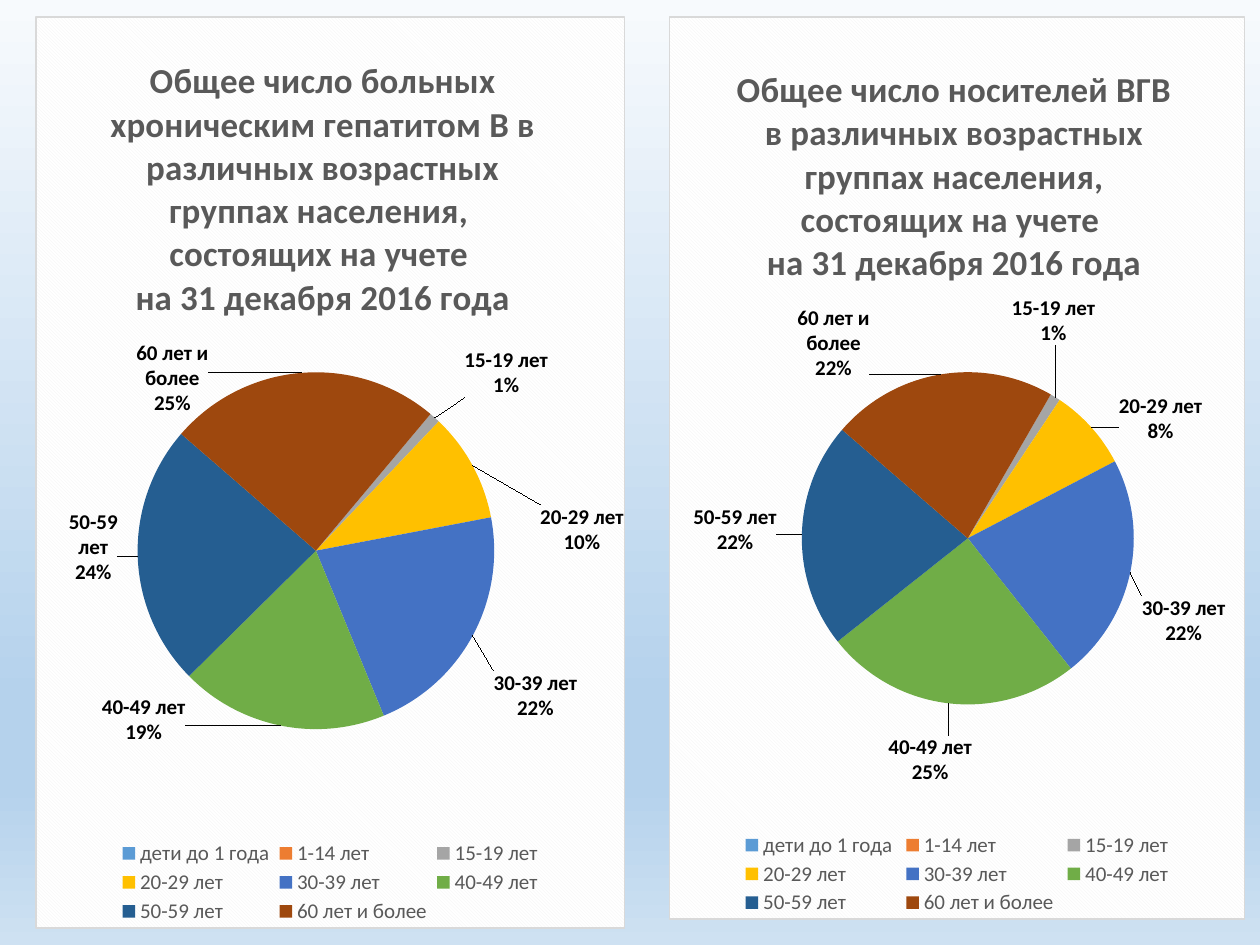
from math import copysign, cos, radians, sin

from lxml import etree
from pptx import Presentation
from pptx.chart.data import CategoryChartData
from pptx.dml.color import RGBColor
from pptx.enum.chart import XL_CHART_TYPE, XL_LABEL_POSITION, XL_LEGEND_POSITION
from pptx.oxml import parse_xml
from pptx.oxml.ns import nsdecls, qn
from pptx.util import Inches, Pt

PIE = XL_CHART_TYPE.PIE
BOTTOM = XL_LEGEND_POSITION.BOTTOM
OUTSIDE = XL_LABEL_POSITION.OUTSIDE_END

THEME = {
    "background": [(0, "F7FAFD"), (74, "B5D2EC"), (83, "B5D2EC"), (100, "CEE1F2")],
    "slices": ["5B9BD5", "ED7D31", "A5A5A5", "FFC000",
               "4472C4", "70AD47", "255E91", "9E480E"],
    "hatch": ("F2F2F2", "FFFFFF"),
    "border": "D9D9D9",
    "base": {"name": "Calibri", "size": Pt(10), "color": "000000"},
    "title": {"name": "Calibri", "size": Pt(20), "bold": True, "color": "595959"},
    "legend": {"name": "Calibri", "size": Pt(12), "color": "595959"},
    "label": {"name": "Calibri", "size": Pt(12), "bold": True, "color": "000000"},
}

AGE_GROUPS = ["дети до 1 года", "1-14 лет", "15-19 лет", "20-29 лет",
              "30-39 лет", "40-49 лет", "50-59 лет", "60 лет и более"]

# Boxes are in inches, plot / title / legend in fractions of the chart,
# label centres in inches on the slide (None: no label)
CHARTS = [
    {
        "title": "Общее число больных хроническим гепатитом В в различных "
                 "возрастных группах населения, \nсостоящих на учете \n"
                 "на 31 декабря 2016 года",
        "values": [0, 0, 1, 10, 22, 19, 24, 25],
        "box": (0.28, 0.13, 4.68, 7.24),
        "plot": (0.173, 0.374, 0.606, 0.424),
        "title_at": (0.12, 0.04),
        "legend_at": (0.13, 0.9, 0.74, 0.1),
        "start": 40,
        "labels": [None, (4.08, 3.64), (3.98, 3.01), (4.57, 4.24),
                   (4.2, 5.49), (1.15, 5.65), (0.66, 4.34), (1.37, 3.07)],
    },
    {
        "title": "Общее число носителей ВГВ в различных возрастных группах "
                 "населения, состоящих на учете \nна 31 декабря 2016 года",
        "values": [0, 0, 1, 8, 22, 25, 22, 22],
        "box": (5.31, 0.13, 4.57, 7.17),
        "plot": (0.23, 0.379, 0.578, 0.398),
        "title_at": (0.11, 0.05),
        "legend_at": (0.12, 0.9, 0.76, 0.1),
        "start": 30,
        "labels": [None, (8.98, 2.83), (8.33, 2.6), (9.17, 3.37),
                   (9.34, 4.91), (7.39, 5.97), (5.89, 4.21), (6.62, 2.79)],
    },
]
LABEL_SIZE = (0.66, 0.38)
LONG_LABEL_SIZE = (0.58, 0.58)


def style(font, look):
    for key, value in look.items():
        if key == "color":
            font.color.rgb = RGBColor.from_string(value)
        else:
            setattr(font, key, value)


def make_layout(edges, inner=False, offset=False):
    """Manual layout from x, y and, if given, width and height."""
    target = '<c:layoutTarget val="inner"/>' if inner else ""
    modes = "" if offset else '<c:xMode val="edge"/><c:yMode val="edge"/>'
    sizes = "".join(f'<c:{tag} val="{round(value, 4)}"/>' for tag, value in zip("xywh", edges))
    return parse_xml(f'<c:layout {nsdecls("c")}><c:manualLayout>{target}{modes}{sizes}'
                     '</c:manualLayout></c:layout>')


def place(parent, layout, after):
    for old in parent.findall(qn("c:layout")):
        parent.remove(old)
    if after is None:
        parent.insert(0, layout)
    else:
        parent.find(qn(after)).addnext(layout)


def set_flag(parent, tag, value, after):
    flag = parent.find(qn(tag))
    if flag is None:
        flag = etree.Element(qn(tag))
        parent.find(qn(after)).addnext(flag)
    flag.set("val", str(value))


def label_offset(item, index):
    """Shift from the usual place outside the slice, in fractions of the chart."""
    left, top, width, height = item["box"]
    px, py, pw, ph = item["plot"]
    radius = min(pw * width, ph * height) / 2
    values = item["values"]
    middle = sum(values[:index]) + values[index] / 2
    angle = radians(item["start"] + 360 * middle / sum(values))
    directions = (sin(angle), -cos(angle))
    centre = (left + (px + pw / 2) * width, top + (py + ph / 2) * height)
    size = LONG_LABEL_SIZE if index == len(values) - 1 else LABEL_SIZE
    shifts = []
    for goal, mid, way, extent, full in zip(
            item["labels"][index], centre, directions, size, (width, height)):
        side = 0 if abs(way) < 0.087 else copysign(1, way)
        shifts.append((goal - mid - radius * way - side * extent / 2) / full)
    return shifts


def add_labels(series, item):
    labels = series.data_labels
    labels.number_format = "0%"
    labels.number_format_is_linked = False
    labels.position = OUTSIDE
    labels.show_percentage = labels.show_category_name = True
    labels.show_value = False
    style(labels.font, THEME["label"])
    for index, centre in enumerate(item["labels"]):
        label = series.points[index].data_label
        label.position = OUTSIDE
        style(label.font, THEME["label"])
        node = series._element.find(f'.//{qn("c:dLbls")}').findall(qn("c:dLbl"))[index]
        if centre is None:
            for child in list(node)[1:]:
                node.remove(child)
            etree.SubElement(node, qn("c:delete")).set("val", "1")
            continue
        place(node, make_layout(label_offset(item, index), offset=True), "c:idx")
        for tag, shown in (("c:showVal", 0), ("c:showCatName", 1), ("c:showPercent", 1)):
            node.find(qn(tag)).set("val", str(shown))
    group = series._element.find(qn("c:dLbls"))
    set_flag(group, "c:showBubbleSize", 0, "c:showPercent")
    set_flag(group, "c:showLeaderLines", 1, "c:showBubbleSize")
    for node in [group, *group.findall(qn("c:dLbl"))]:
        last = node.find(qn("c:showBubbleSize"))
        if last is not None:
            separator = etree.Element(qn("c:separator"))
            separator.text = "\n"
            last.addnext(separator)


def add_pie(slide, item):
    data = CategoryChartData()
    data.categories = AGE_GROUPS
    data.add_series("Series 1", item["values"])
    chart = slide.shapes.add_chart(PIE, *map(Inches, item["box"]), data).chart
    style(chart.font, THEME["base"])
    space = chart._chartSpace

    # Title and legend
    chart.has_title = True
    chart.chart_title.text_frame.text = item["title"]
    for paragraph in chart.chart_title.text_frame.paragraphs:
        style(paragraph.font, THEME["title"])
        for run in paragraph.runs:
            style(run.font, THEME["title"])
    place(chart.chart_title._element, make_layout(item["title_at"]), "c:tx")
    chart.has_legend = True
    chart.legend.position = BOTTOM
    chart.legend.include_in_layout = False
    style(chart.legend.font, THEME["legend"])
    place(chart.legend._element, make_layout(item["legend_at"]), "c:legendPos")

    # Pie, slices and labels
    plot = chart.plots[0]
    plot.vary_by_categories = True
    place(space.find(f'.//{qn("c:plotArea")}'), make_layout(item["plot"], inner=True), None)
    series = plot.series[0]
    for index, color in enumerate(THEME["slices"]):
        fill = series.points[index].format.fill
        fill.solid()
        fill.fore_color.rgb = RGBColor.from_string(color)
    add_labels(series, item)
    set_flag(plot._element, "c:firstSliceAng", item["start"], "c:ser")

    # Hatched panel with a thin border
    front, back = THEME["hatch"]
    space.find(qn("c:chart")).addnext(parse_xml(
        f'<c:spPr {nsdecls("c", "a")}><a:pattFill prst="dkDnDiag">'
        f'<a:fgClr><a:srgbClr val="{front}"/></a:fgClr>'
        f'<a:bgClr><a:srgbClr val="{back}"/></a:bgClr></a:pattFill>'
        f'<a:ln w="{Pt(0.75)}"><a:solidFill><a:srgbClr val="{THEME["border"]}"/>'
        '</a:solidFill></a:ln></c:spPr>'))


def paint_background(slide):
    fill = slide.background.fill
    fill.gradient()
    fill.gradient_angle = 270
    stops = slide._element.find(f'.//{qn("a:gsLst")}')
    for old in list(stops):
        stops.remove(old)
    for percent, color in THEME["background"]:
        stop = etree.SubElement(stops, qn("a:gs"), pos=str(percent * 1000))
        etree.SubElement(stop, qn("a:srgbClr"), val=color)


prs = Presentation()
prs.slide_width, prs.slide_height = Inches(10), Inches(7.5)
slide = prs.slides.add_slide(prs.slide_layouts[6])
paint_background(slide)
for item in CHARTS:
    add_pie(slide, item)
prs.save("out.pptx")
